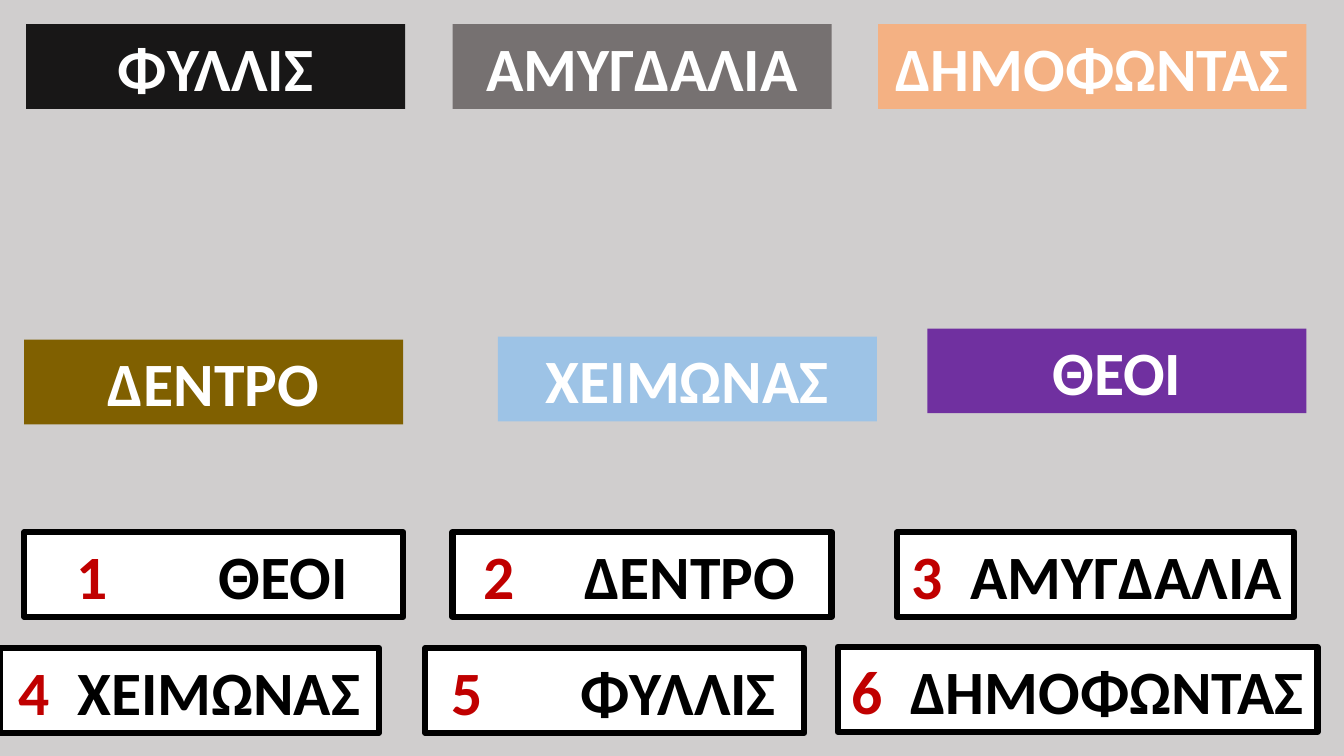
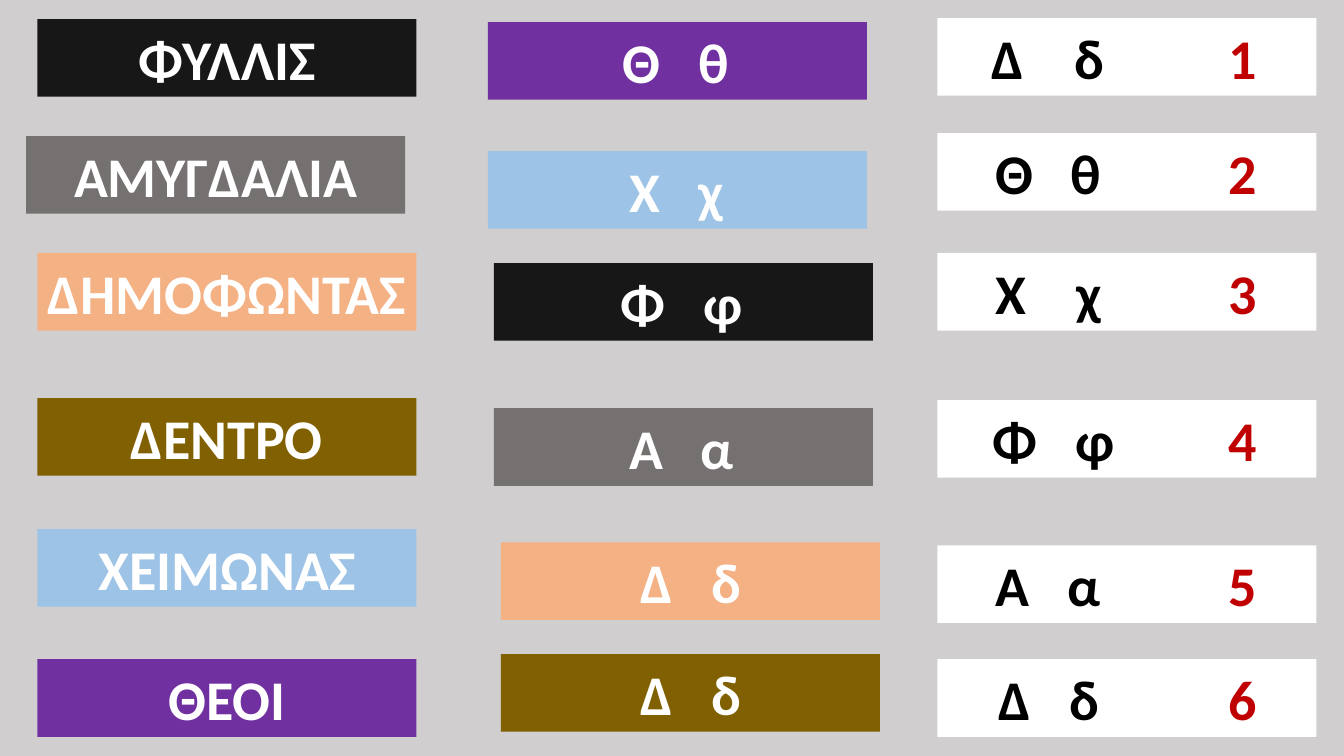
from lxml.etree import SubElement
from pptx import Presentation
from pptx.dml.color import RGBColor
from pptx.enum.shapes import MSO_SHAPE
from pptx.enum.text import MSO_ANCHOR, PP_ALIGN
from pptx.oxml.ns import qn
from pptx.util import Inches, Pt

SLIDE_WIDTH, SLIDE_HEIGHT = Inches(13.33), Inches(7.5)
FONT = "Calibri"
COLOURS = {
    "background": "D0CECE",
    "white": "FFFFFF",
    "black": "000000",
    "number": "C00000",
    "ΦΥΛΛΙΣ": "181717",
    "ΑΜΥΓΔΑΛΙΑ": "767171",
    "ΔΗΜΟΦΩΝΤΑΣ": "F4B183",
    "ΔΕΝΤΡΟ": "806000",
    "ΧΕΙΜΩΝΑΣ": "9DC3E6",
    "ΘΕΟΙ": "7030A0",
}

BAND_WIDTH = 28.2
WORD_SIZE, WORD_HEIGHT = 44, 11.2
LETTER_SIZE, LETTER_HEIGHT = 40, 10.27
LETTER_LEFT, CARD_LEFT = 2.78, 69.75
NUMBER_COLUMN = 21.65

WORD_BANDS = [
    ("ΦΥΛΛΙΣ", 1.95, 3.2, BAND_WIDTH),
    ("ΑΜΥΓΔΑΛΙΑ", 33.68, 3.2, BAND_WIDTH),
    ("ΔΗΜΟΦΩΝΤΑΣ", 65.33, 3.2, 31.88),
    ("ΔΕΝΤΡΟ", 1.8, 44.93, BAND_WIDTH),
    ("ΧΕΙΜΩΝΑΣ", 37.05, 44.53, BAND_WIDTH),
    ("ΘΕΟΙ", 69, 43.47, BAND_WIDTH),
]
ANSWERS = [
    ("ΘΕΟΙ", 1.8, 70.4, BAND_WIDTH, 3.9, 10.6),
    ("ΔΕΝΤΡΟ", 33.68, 70.4, BAND_WIDTH, 2.3, 7.5),
    ("ΑΜΥΓΔΑΛΙΑ", 66.75, 70.4, 29.55, 1.05, 4.4),
    ("ΧΕΙΜΩΝΑΣ", 0, 85.73, BAND_WIDTH, 1.35, 4.4),
    ("ΦΥΛΛΙΣ", 31.65, 85.73, BAND_WIDTH, 1.95, 9.6),
    ("ΔΗΜΟΦΩΝΤΑΣ", 62.33, 85.6, 35.7, 1, 4.4),
]
NAMES = [
    ("ΦΥΛΛΙΣ", LETTER_LEFT, 2.53),
    ("ΑΜΥΓΔΑΛΙΑ", 1.95, 18),
    ("ΔΗΜΟΦΩΝΤΑΣ", LETTER_LEFT, 33.47),
    ("ΔΕΝΤΡΟ", LETTER_LEFT, 52.67),
    ("ΧΕΙΜΩΝΑΣ", LETTER_LEFT, 70),
    ("ΘΕΟΙ", LETTER_LEFT, 87.2),
]
LETTER_GAPS = {"Θ": 5.6, "Χ": 5.1, "Φ": 6.15, "Α": 5.3, "Δ": 5.25}
INITIALS = [
    ("ΘΕΟΙ", 36.3, 2.93, 10.05),
    ("ΧΕΙΜΩΝΑΣ", 36.3, 20, 10.55),
    ("ΦΥΛΛΙΣ", 36.75, 34.8, 9.45),
    ("ΑΜΥΓΔΑΛΙΑ", 36.75, 54, 10.1),
    ("ΔΗΜΟΦΩΝΤΑΣ", 37.28, 71.73, 10.4),
    ("ΔΕΝΤΡΟ", 37.28, 86.53, 10.4),
]
NUMBERED_LETTERS = [
    ("Δ", 2.4, 4.05, 0.9),
    ("Θ", 17.6, 4.3, 0),
    ("Χ", 33.47, 4.35, 0.9),
    ("Φ", 52.93, 4.1, 0),
    ("Α", 72.13, 4.35, 0),
    ("Δ", 87.2, 4.55, 0),
]


def across(share):
    return round(SLIDE_WIDTH * share / 100)


def down(share):
    return round(SLIDE_HEIGHT * share / 100)


def colour(name):
    return RGBColor.from_string(COLOURS[name])


def add_slide(deck):
    slide = deck.slides.add_slide(deck.slide_layouts[6])
    slide.background.fill.solid()
    slide.background.fill.fore_color.rgb = colour("background")
    return slide


def add_tab_stops(paragraph, stops):
    tab_list = SubElement(paragraph._p.get_or_add_pPr(), qn("a:tabLst"))
    for stop in stops:
        SubElement(tab_list, qn("a:tab"), pos=str(across(stop)), algn="l")


def add_band(slide, box, fill, parts, size, indent=0, stops=(), outlined=False):
    left, top, width, height = box
    band = slide.shapes.add_shape(MSO_SHAPE.RECTANGLE, across(left), down(top),
                                  across(width), down(height))
    band.shadow.inherit = False
    band.fill.solid()
    band.fill.fore_color.rgb = colour(fill)
    if outlined:
        band.line.color.rgb = colour("black")
        band.line.width = Pt(4.5)
    else:
        band.line.fill.background()
    frame = band.text_frame
    frame.word_wrap = True
    frame.vertical_anchor = MSO_ANCHOR.MIDDLE
    frame.margin_left, frame.margin_right = across(indent), 0
    paragraph = frame.paragraphs[0]
    paragraph.alignment = PP_ALIGN.LEFT if stops else PP_ALIGN.CENTER
    if stops:
        add_tab_stops(paragraph, stops)
    for text, ink in parts:
        run = paragraph.add_run()
        run.text = text
        run.font.name = FONT
        run.font.size = Pt(size)
        run.font.bold = True
        run.font.color.rgb = colour(ink)


def letter_pair(letter):
    return f"{letter}\t{letter.lower()}"


def add_words_slide(deck):
    slide = add_slide(deck)
    for word, left, top, width in WORD_BANDS:
        add_band(slide, (left, top, width, WORD_HEIGHT), word,
                 [(word, "white")], WORD_SIZE)
    for number, (word, left, top, width, indent, gap) in enumerate(ANSWERS, 1):
        add_band(slide, (left, top, width, WORD_HEIGHT), "white",
                 [(f"{number}\t", "number"), (word, "black")],
                 WORD_SIZE, indent, [gap], outlined=True)


def add_letters_slide(deck):
    slide = add_slide(deck)
    for word, left, top in NAMES:
        add_band(slide, (left, top, BAND_WIDTH, LETTER_HEIGHT), word,
                 [(word, "white")], LETTER_SIZE)
    for word, left, top, indent in INITIALS:
        letter = word[0]
        add_band(slide, (left, top, BAND_WIDTH, LETTER_HEIGHT), word,
                 [(letter_pair(letter), "white")],
                 LETTER_SIZE, indent, [LETTER_GAPS[letter]])
    for number, (letter, top, indent, extra) in enumerate(NUMBERED_LETTERS, 1):
        add_band(slide, (CARD_LEFT, top, BAND_WIDTH, LETTER_HEIGHT), "white",
                 [(letter_pair(letter), "black"), (f"\t{number}", "number")],
                 LETTER_SIZE, indent,
                 [LETTER_GAPS[letter] + extra, NUMBER_COLUMN - indent])


def main():
    deck = Presentation()
    deck.slide_width, deck.slide_height = SLIDE_WIDTH, SLIDE_HEIGHT
    add_words_slide(deck)
    add_letters_slide(deck)
    deck.save("out.pptx")


if __name__ == "__main__":
    main()
